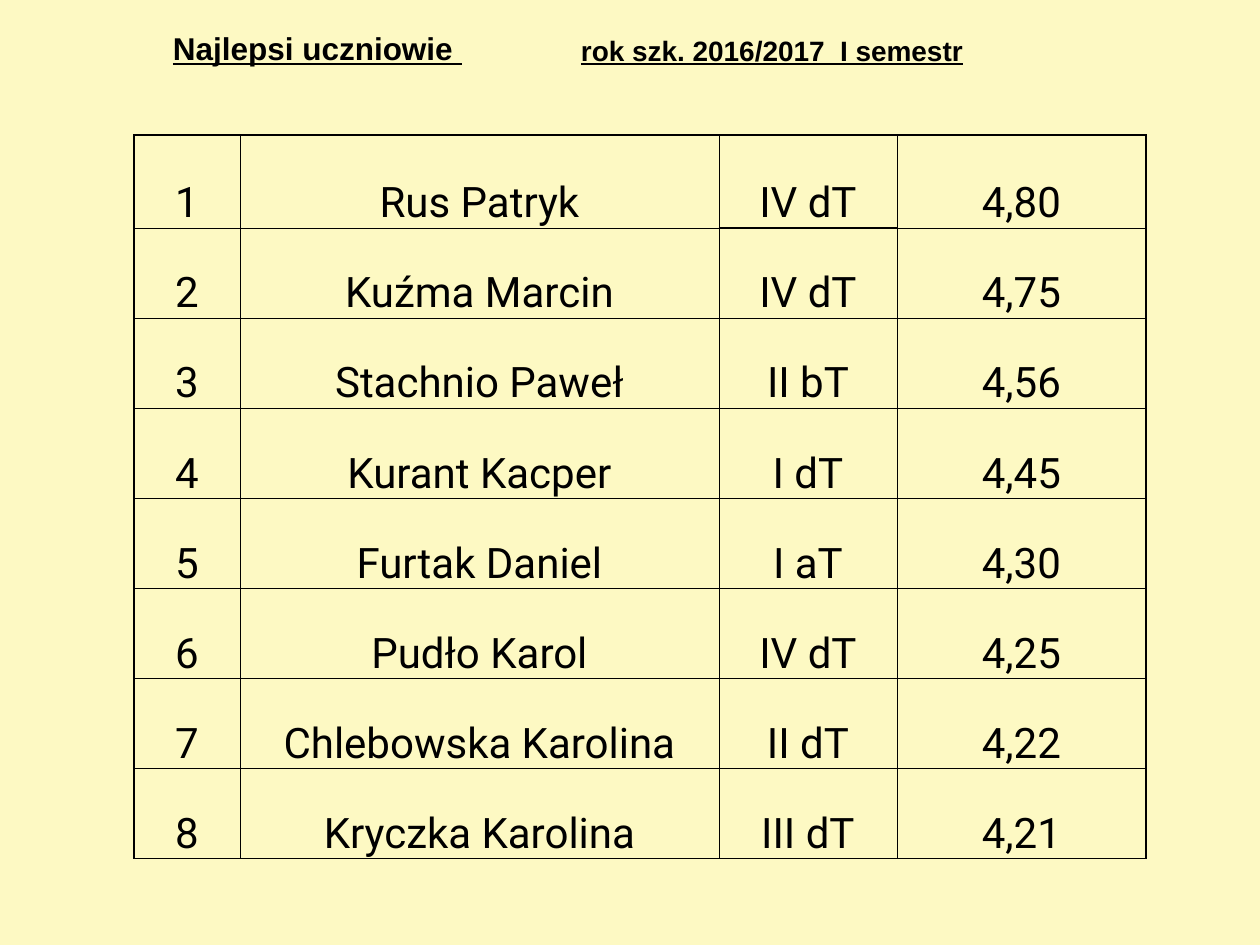
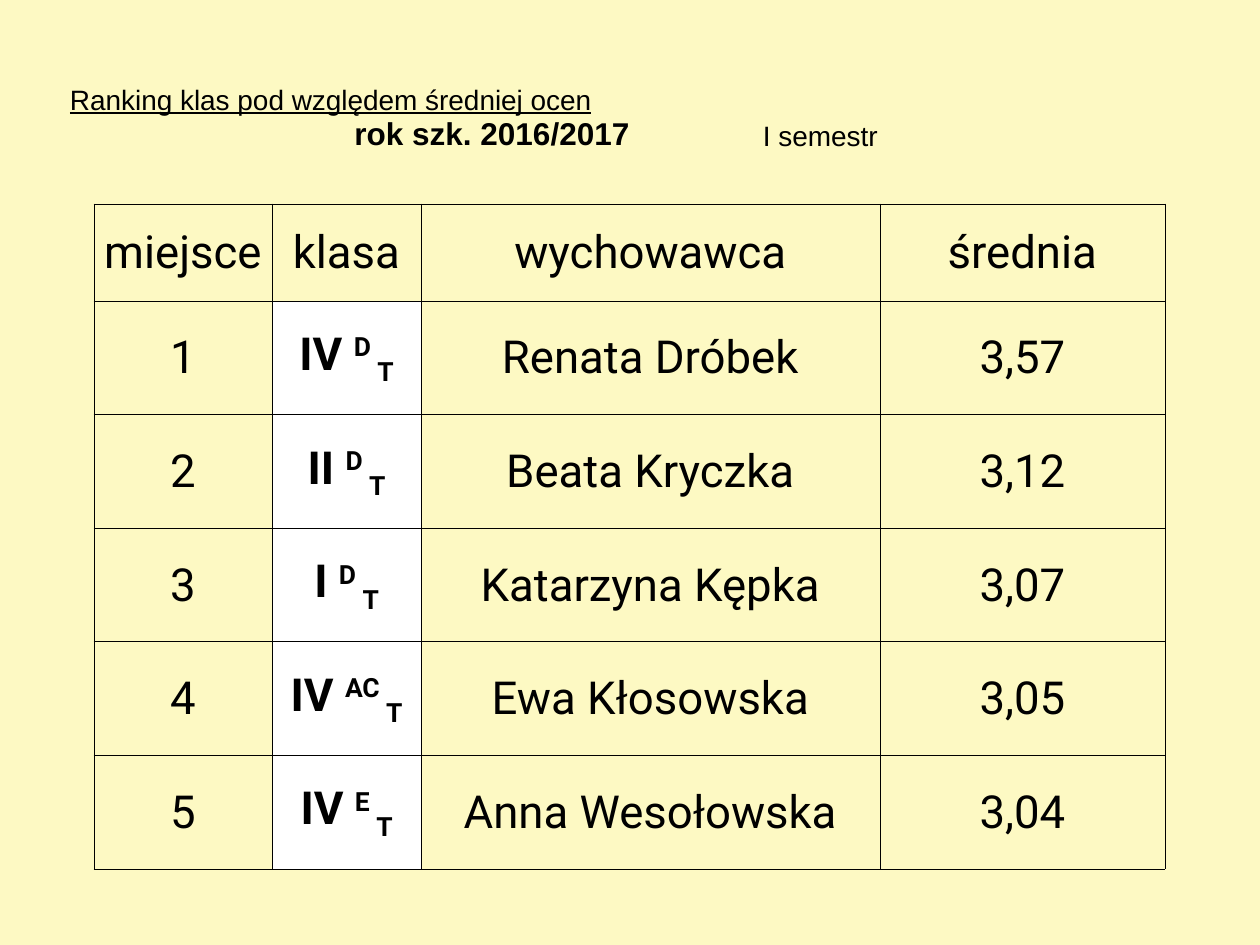
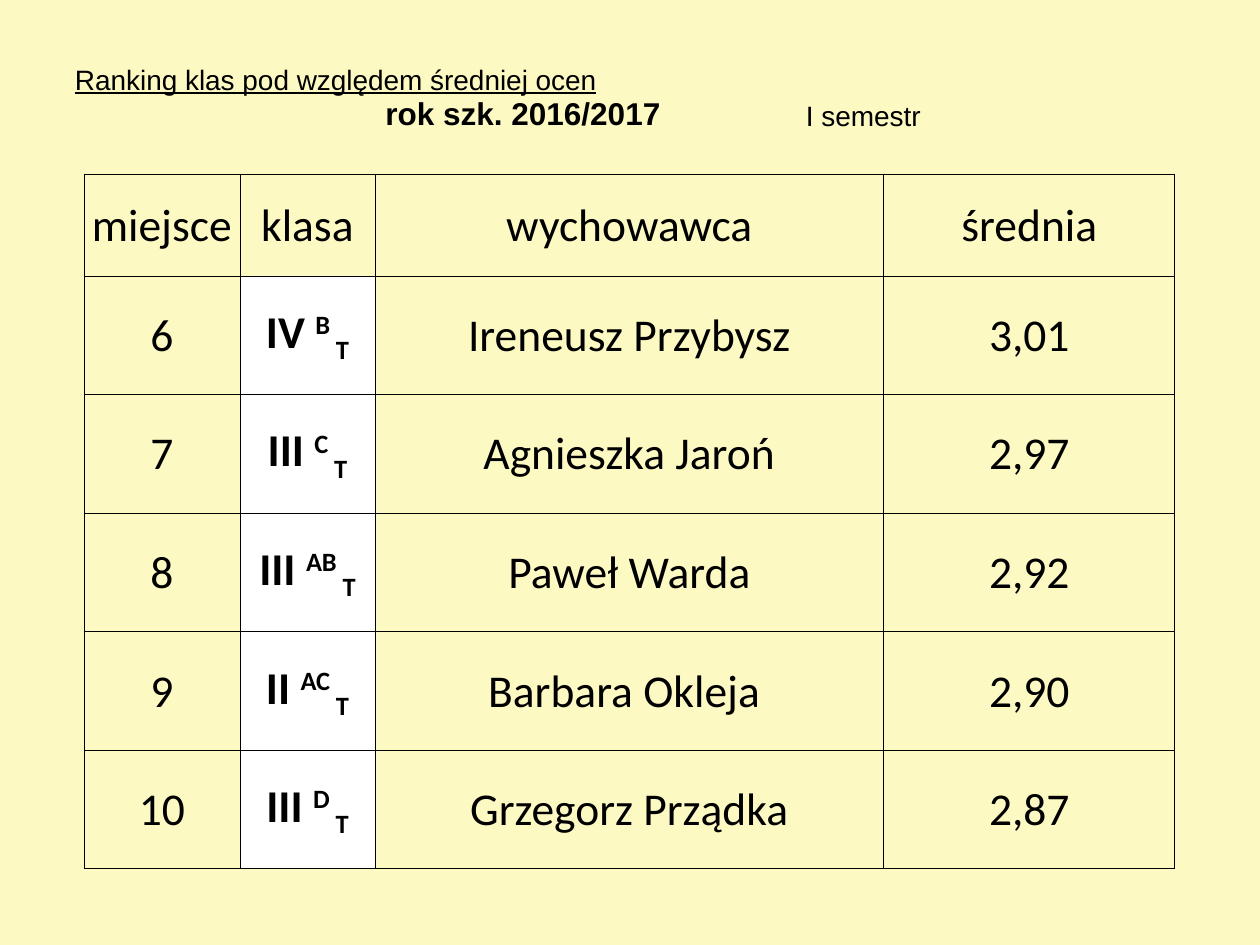
from dataclasses import dataclass

from lxml import etree
from pptx import Presentation
from pptx.dml.color import RGBColor
from pptx.enum.text import MSO_ANCHOR, PP_ALIGN
from pptx.oxml.ns import qn
from pptx.util import Pt

BOTTOM = MSO_ANCHOR.BOTTOM
MIDDLE = MSO_ANCHOR.MIDDLE
LEFT = PP_ALIGN.LEFT
CENTER = PP_ALIGN.CENTER
EMU_PER_PX = 914400 / 126
NO_STYLE = "{2D5ABB26-0587-4C30-8999-92F81FD0307C}"


def px(length):
    return round(length * EMU_PER_PX)


@dataclass(frozen=True)
class Theme:
    paper: str = "FDF69C"
    paper_alpha: str = "60000"
    ink: str = "000000"
    highlight: str = "FFFFFF"
    heading_font: str = "Arial"
    body_font: str = "Roboto"
    ranking_font: str = "Calibri"
    note: int = 16
    title: int = 18
    pupil: int = 24
    ranking: int = 26
    empty: int = 14
    thin: float = 0.5
    thick: float = 1


class Board:
    def __init__(self, theme):
        self.theme = theme
        self.deck = Presentation()
        self.deck.slide_width, self.deck.slide_height = px(1260), px(945)
        self.page = None

    def add_page(self):
        self.page = self.deck.slides.add_slide(self.deck.slide_layouts[6])
        fill = self.page.background.fill
        fill.solid()
        fill.fore_color.rgb = RGBColor.from_string(self.theme.paper)
        color = next(self.page.element.iter(qn("a:srgbClr")))
        etree.SubElement(color, qn("a:alpha"), val=self.theme.paper_alpha)

    def add_table(self, left, top, columns, rows):
        frame = self.page.shapes.add_table(
            len(rows), len(columns), px(left), px(top), px(sum(columns)), px(sum(rows)))
        table = frame.table
        table.first_row = table.horz_banding = False
        next(table._tbl.iter(qn("a:tableStyleId"))).text = NO_STYLE
        for column, width in zip(table.columns, columns):
            column.width = px(width)
        for row, height in zip(table.rows, rows):
            row.height = px(height)
        return table

    def fill_cell(self, cell, spans, font, align, anchor, inset, top=0):
        box = {"margin_left": px(inset), "margin_right": px(inset), "margin_top": px(top),
               "margin_bottom": 0, "vertical_anchor": anchor}
        for name, value in box.items():
            setattr(cell, name, value)
        para = cell.text_frame.paragraphs[0]
        para.alignment = align
        for text, size, formats in spans:
            span = para.add_run()
            span.text = text
            span.font.color.rgb = RGBColor.from_string(self.theme.ink)
            for name, value in {"name": font, "size": Pt(size), **formats}.items():
                if name == "baseline":
                    span._r.get_or_add_rPr().set(name, value)
                else:
                    setattr(span.font, name, value)
        if not spans:
            etree.SubElement(para._p, qn("a:endParaRPr"), sz=str(self.theme.empty * 100))

    def border(self, cell, side, width):
        line = etree.SubElement(cell._tc.get_or_add_tcPr(), qn(f"a:ln{side}"), w=str(Pt(width)))
        fill = etree.SubElement(line, qn("a:solidFill"))
        etree.SubElement(fill, qn("a:srgbClr"), val=self.theme.ink)

    def heading(self, left, top, columns, rows, texts, merges=()):
        table = self.add_table(left, top, columns, rows)
        for row, first, last in merges:
            table.cell(row, first).merge(table.cell(row, last))
        for row in range(len(rows)):
            for column in range(len(columns)):
                cell = table.cell(row, column)
                spans, align = texts.get((row, column), ([], LEFT))
                self.fill_cell(cell, spans, self.theme.heading_font, align, BOTTOM, 6)
                cell.fill.background()

    def grid(self, left, top, columns, first_row, other_rows, records, font, size, anchor,
             class_column=None, thick=()):
        count = len(records) - 1
        table = self.add_table(left, top, columns, [first_row] + [other_rows / count] * count)
        for row, record in enumerate(records):
            for column, text in enumerate(record):
                cell = table.cell(row, column)
                is_class = row > 0 and column == class_column
                spans = self.class_spans(text, size) if is_class else [(text, size, {})]
                self.fill_cell(cell, spans, font, CENTER, anchor, 1, 1)
                for side in "LRTB":
                    heavy = (row, column, side) in thick
                    self.border(cell, side, self.theme.thick if heavy else self.theme.thin)
                if is_class:
                    cell.fill.solid()
                    cell.fill.fore_color.rgb = RGBColor.from_string(self.theme.highlight)
                else:
                    cell.fill.background()

    def class_spans(self, text, size):
        year, group = text.split()
        return [(f"{year} ", size, {"bold": True}),
                (f"{group} ", size, {"bold": True, "baseline": "30000"}),
                ("T", size, {"bold": True, "baseline": "-25000"})]

    def ranking_heading(self, left, top, columns):
        theme = self.theme
        self.heading(left, top, columns, [67, 36], {
            (0, 0): ([("Ranking klas pod względem średniej ocen", theme.note,
                       {"underline": True})], LEFT),
            (1, 2): ([("rok szk. 2016/2017", theme.title, {"bold": True})], CENTER),
            (1, 3): ([("I semestr", theme.note, {})], LEFT),
        }, merges=[(0, 0, 2), (1, 3, 4)])


RANKING_HEADER = ("miejsce", "klasa", "wychowawca", "średnia")
PUPILS = [
    ("1", "Rus Patryk", "IV dT", "4,80"),
    ("2", "Kuźma Marcin", "IV dT", "4,75"),
    ("3", "Stachnio Paweł", "II bT", "4,56"),
    ("4", "Kurant Kacper", "I dT", "4,45"),
    ("5", "Furtak Daniel", "I aT", "4,30"),
    ("6", "Pudło Karol", "IV dT", "4,25"),
    ("7", "Chlebowska Karolina", "II dT", "4,22"),
    ("8", "Kryczka Karolina", "III dT", "4,21"),
]
TOP_CLASSES = [
    ("1", "IV D", "Renata Dróbek", "3,57"),
    ("2", "II D", "Beata Kryczka", "3,12"),
    ("3", "I D", "Katarzyna Kępka", "3,07"),
    ("4", "IV AC", "Ewa Kłosowska", "3,05"),
    ("5", "IV E", "Anna Wesołowska", "3,04"),
]
NEXT_CLASSES = [
    ("6", "IV B", "Ireneusz Przybysz", "3,01"),
    ("7", "III C", "Agnieszka Jaroń", "2,97"),
    ("8", "III AB", "Paweł Warda", "2,92"),
    ("9", "II AC", "Barbara Okleja ", "2,90"),
    ("10", "III D", "Grzegorz Prządka", "2,87"),
]


def best_pupils(board):
    theme = board.theme
    strong = {"bold": True, "underline": True}
    board.add_page()
    board.heading(94, 29, [73, 304, 602], [38], {
        (0, 1): ([("Najlepsi uczniowie ", theme.title, strong)], LEFT),
        (0, 2): ([("rok szk. 2016/2017  I semestr", theme.note, strong)], CENTER),
    })
    thick = {(row, column, side) for row in range(len(PUPILS))
             for column, side in ((0, "L"), (3, "R"))}
    thick |= {(0, column, "T") for column in range(4)}
    thick |= {(0, 2, "B"), (1, 2, "T")}
    board.grid(134, 135, [106, 479, 178, 249], 93, 631, PUPILS,
               theme.body_font, theme.pupil, BOTTOM, thick=thick)


def top_classes(board):
    theme = board.theme
    board.add_page()
    board.ranking_heading(64, 49, [52, 111, 530, 247, 137])
    board.grid(94, 204, [178, 149, 459, 285], 97, 568, [RANKING_HEADER, *TOP_CLASSES],
               theme.body_font, theme.ranking, MIDDLE, class_column=1)


def next_classes(board):
    theme = board.theme
    board.add_page()
    board.ranking_heading(69, 29, [61, 116, 554, 258, 144])
    board.grid(84, 174, [156, 135, 509, 291], 102, 593, [RANKING_HEADER, *NEXT_CLASSES],
               theme.ranking_font, theme.ranking, MIDDLE, class_column=1)


def main():
    board = Board(Theme())
    for build in (best_pupils, top_classes, next_classes):
        build(board)
    board.deck.save("out.pptx")


if __name__ == "__main__":
    main()
